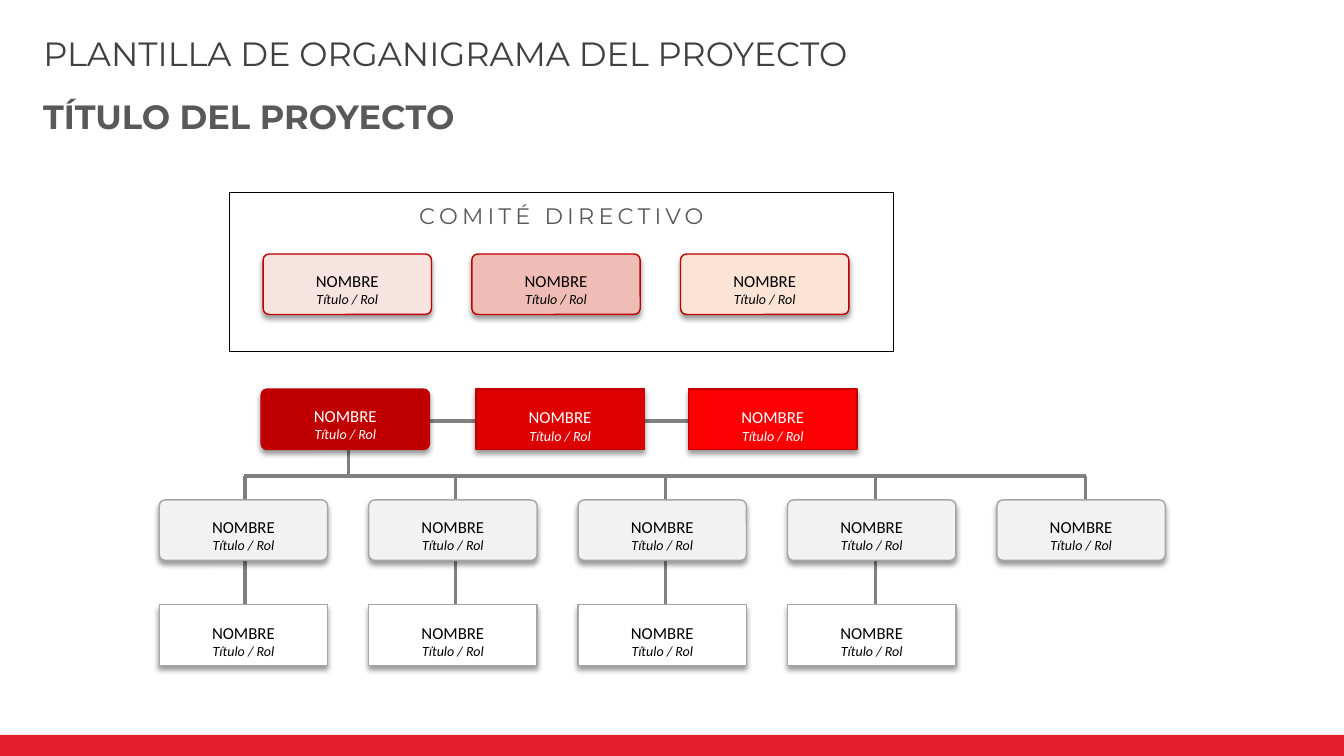
from lxml import etree
from pptx import Presentation
from pptx.dml.color import RGBColor
from pptx.enum import shapes as kinds, text as modes
from pptx.oxml import ns
from pptx.util import Inches, Pt

COLORS = {
    "black": "000000", "white": "FFFFFF", "title": "404040", "gray": "595959",
    "wire": "808080", "edge": "A6A6A6", "pale": "F2F2F2", "red": "C00000",
    "mid": "DC0000", "bright": "FB0000", "rose": "F7E3DF", "pink": "EFBDB5",
    "peach": "FBE3D6", "band": "E4202E",
}
RECT = kinds.MSO_SHAPE.RECTANGLE
ROUND = kinds.MSO_SHAPE.ROUNDED_RECTANGLE
CARD_W, CARD_H = 1.67, 0.6
TEAM_X, TEAM_STEP = 1.58, 2.077
WIRE_X, WIRE_STEP = 2.43, 2.085
BUS_Y = 4.72


def rgb(name):
    return RGBColor.from_string(COLORS[name])


def add_run(para, words, size, font, color, bold=False, italic=False):
    run = para.add_run()
    run.text = words
    face = run.font
    face.size, face.name = Pt(size), font
    face.bold, face.italic = bold, italic
    face.color.rgb = rgb(color)
    return run


def add_box(slide, kind, left, top, width, height, fill=None, line=None, weight=1):
    box = slide.shapes.add_shape(
        kind, Inches(left), Inches(top), Inches(width), Inches(height))
    box.shadow.inherit = False
    if fill:
        box.fill.solid()
        box.fill.fore_color.rgb = rgb(fill)
    else:
        box.fill.background()
    if line:
        box.line.color.rgb = rgb(line)
        box.line.width = Pt(weight)
    else:
        box.line.fill.background()
    return box


def add_shadow(box):
    effects = box._element.spPr.find(ns.qn("a:effectLst"))
    shade = etree.SubElement(
        effects, ns.qn("a:outerShdw"), blurRad=str(Pt(4)), dist=str(Pt(3)),
        dir="5400000", algn="t", rotWithShape="0")
    tint = etree.SubElement(shade, ns.qn("a:srgbClr"), val=COLORS["black"])
    etree.SubElement(tint, ns.qn("a:alpha"), val="40000")


def set_frame(frame, anchor, left, top, right, bottom):
    frame.word_wrap = True
    frame.vertical_anchor = anchor
    frame.margin_left, frame.margin_top = Inches(left), Inches(top)
    frame.margin_right, frame.margin_bottom = Inches(right), Inches(bottom)


def add_card(slide, kind, left, top, fill, line, color="black"):
    card = add_box(slide, kind, left, top, CARD_W, CARD_H, fill, line)
    add_shadow(card)
    if kind == ROUND:
        card.adjustments[0] = 0.1
    frame = card.text_frame
    inset = 0.02 if kind == ROUND else 0.04
    set_frame(frame, modes.MSO_ANCHOR.MIDDLE, 0.02, inset, 0.02, 0.02)
    name, role = frame.paragraphs[0], frame.add_paragraph()
    name.alignment = role.alignment = modes.PP_ALIGN.CENTER
    name.line_spacing = 1.5
    add_run(name, "NOMBRE", 12, "Calibri", color)
    add_run(role, "Título / Rol", 10, "Calibri", color, italic=True)


def add_wire(slide, x1, y1, x2, y2, weight=2.25):
    wire = slide.shapes.add_connector(
        kinds.MSO_CONNECTOR.STRAIGHT,
        Inches(x1), Inches(y1), Inches(x2), Inches(y2))
    wire.line.color.rgb = rgb("wire")
    wire.line.width = Pt(weight)
    etree.SubElement(wire._element.spPr, ns.qn("a:effectLst"))


def fill_head(box, words, color, bold=False, wrap=True):
    frame = box.text_frame
    set_frame(frame, modes.MSO_ANCHOR.TOP, 0.1, 0.05, 0.1, 0.05)
    frame.word_wrap = wrap
    frame.auto_size = modes.MSO_AUTO_SIZE.SHAPE_TO_FIT_TEXT
    para = frame.paragraphs[0]
    para.alignment = modes.PP_ALIGN.LEFT
    add_run(para, words, 24, "Montserrat", color, bold)


def add_heads(slide):
    title = slide.shapes.title
    title.left, title.top = Inches(0.33), Inches(0.28)
    title.width, title.height = Inches(9.58), Inches(0.5)
    fill_head(title, "PLANTILLA DE ORGANIGRAMA DEL PROYECTO", "title")
    label = slide.shapes.add_textbox(
        Inches(0.33), Inches(0.9), Inches(4.35), Inches(0.5))
    fill_head(label, "TÍTULO DEL PROYECTO", "gray", bold=True, wrap=False)


def add_board(slide):
    board = add_box(slide, RECT, 2.28, 1.91, 6.58, 1.58, line="black", weight=0.75)
    set_frame(board.text_frame, modes.MSO_ANCHOR.TOP, 0.1, 0.1, 0.1, 0.05)
    para = board.text_frame.paragraphs[0]
    para.alignment = modes.PP_ALIGN.CENTER
    run = add_run(para, "COMITÉ DIRECTIVO", 16, "Montserrat", "gray")
    run.font._element.set("spc", "300")
    for i, fill in enumerate(("rose", "pink", "peach")):
        add_card(slide, ROUND, 2.61 + i * 2.07, 2.52, fill, "red")


def add_wires(slide):
    add_wire(slide, 3.46, 4.17, 3.46, BUS_Y)
    for i in range(5):
        x = WIRE_X + i * WIRE_STEP
        add_wire(slide, x, BUS_Y, x, 6.32 if i < 4 else 5.32)
    add_wire(slide, 2.42, BUS_Y, 10.77, BUS_Y, 3)
    add_wire(slide, 3.45, 4.18, 7.66, 4.18, 3)


def main():
    prs = Presentation()
    prs.slide_width, prs.slide_height = Inches(13.33), Inches(7.5)
    slide = prs.slides.add_slide(prs.slide_layouts[5])

    # Headings and steering committee
    add_heads(slide)
    add_board(slide)

    # Connecting lines lie behind the cards
    add_wires(slide)

    # Project leads
    for kind, left, fill in ((ROUND, 2.59, "red"), (RECT, 4.72, "mid"),
                             (RECT, 6.83, "bright")):
        add_card(slide, kind, left, 3.86, fill, "red", "white")

    # Teams: five heads, four of them with a member below
    for i in range(5):
        left = TEAM_X + i * TEAM_STEP
        add_card(slide, ROUND, left, 4.96, "pale", "edge")
        if i < 4:
            add_card(slide, RECT, left, 6, "white", "edge")

    # Footer band
    add_box(slide, RECT, 0, 7.29, 13.33, 0.21, "band")
    prs.save("out.pptx")


if __name__ == "__main__":
    main()
